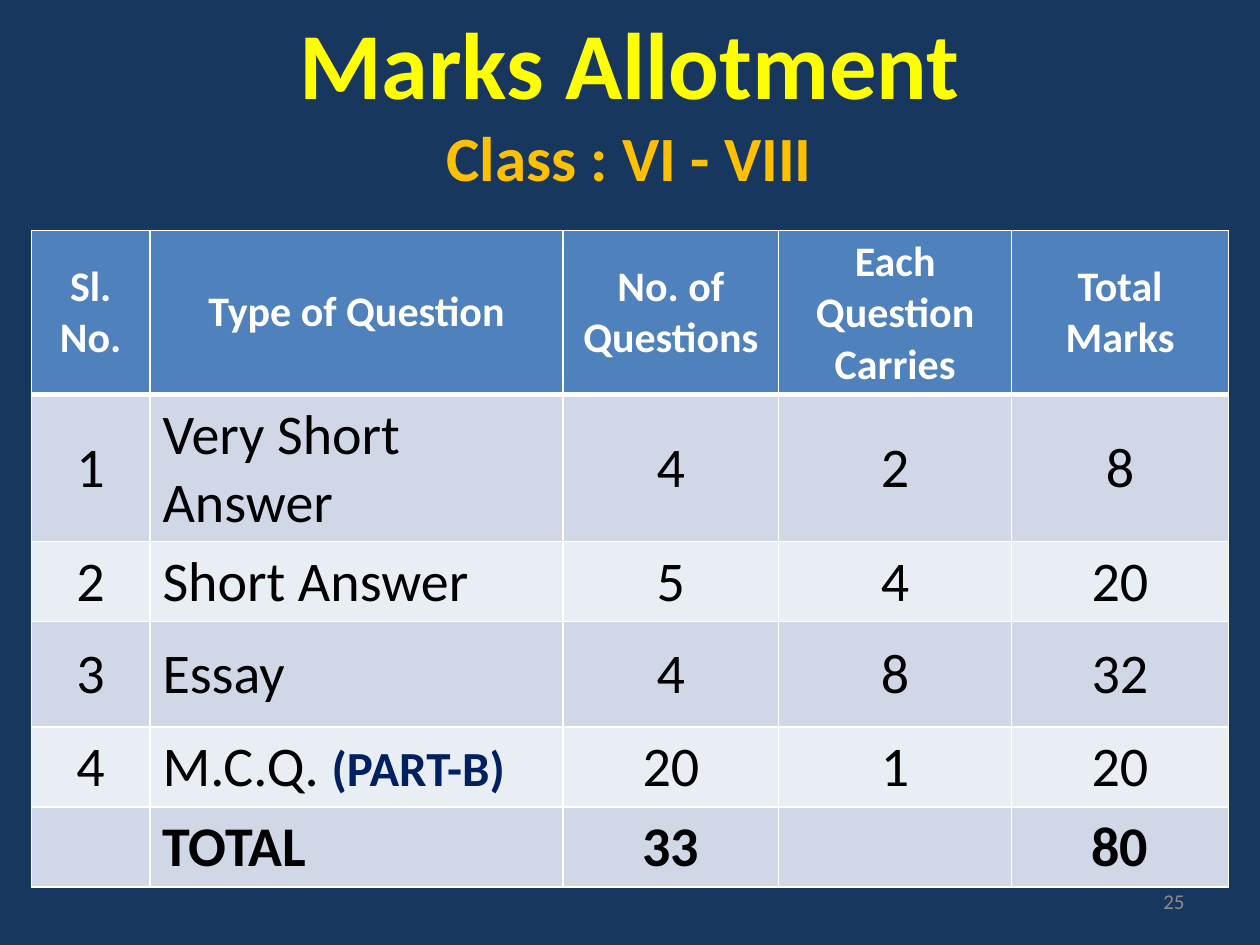
"""Build the marks allotment slide with its table of question types."""
from typing import NamedTuple

from lxml.etree import SubElement
from pptx import Presentation
from pptx.dml.color import RGBColor
from pptx.enum.text import MSO_ANCHOR as Anchor, PP_ALIGN as Align
from pptx.oxml.ns import qn
from pptx.util import Inches, Pt

FONT = "Calibri"
WHITE, BLACK, NAVY = "FFFFFF", "000000", "002060"
HEADER_FILL, BANDS = "4F81BD", ("D0D8E8", "E9EDF4")
COL_WIDTHS = (0.94, 3.28, 1.71, 1.85, 1.72)
ROW_HEIGHTS = (0.96, 0.87, 0.47, 0.84, 0.47, 0.47)
HEADINGS = ("Sl. No.", "Type of Question", "No. of Questions",
            "Each Question Carries", "Total Marks")


class MarkRow(NamedTuple):
    """One line of the allotment table."""
    number: str
    kind: str
    questions: str
    each: str
    total: str
    note: str = ""
    bold: bool = False


MARK_ROWS = (
    MarkRow("1", "Very Short Answer", "4", "2", "8"),
    MarkRow("2", "Short Answer", "5", "4", "20"),
    MarkRow("3", "Essay", "4", "8", "32"),
    MarkRow("4", "M.C.Q. ", "20", "1", "20", note="(PART-B)"),
    MarkRow("", "TOTAL", "33", "", "80", bold=True),
)


def rgb(value: str) -> RGBColor:
    """Turn a hex string into a colour."""
    return RGBColor.from_string(value)


def add_text(p, text: str, *, size: float, color: str, bold: bool = False,
             align: Align = Align.CENTER) -> None:
    """Add a formatted run to a paragraph."""
    p.alignment = align
    r = p.add_run()
    r.text = text
    r.font.name, r.font.size, r.font.bold = FONT, Pt(size), bold
    r.font.color.rgb = rgb(color)


def add_box(slide, left: float, top: float, width: float, height: float):
    """Add a wrapping, middle-anchored text box and return its paragraph."""
    tf = slide.shapes.add_textbox(
        Inches(left), Inches(top), Inches(width), Inches(height)).text_frame
    tf.word_wrap = True
    tf.vertical_anchor = Anchor.MIDDLE
    return tf.paragraphs[0]


def style_cell(cell, fill: str, top: float = 1, bottom: float = 1) -> None:
    """Give a cell white borders, a fill and a middle anchor."""
    cell.vertical_anchor = Anchor.MIDDLE
    tc_pr = cell._tc.get_or_add_tcPr()
    for side, width in (("L", 1), ("R", 1), ("T", top), ("B", bottom)):
        ln = SubElement(tc_pr, qn(f"a:ln{side}"), w=str(Pt(width)))
        SubElement(SubElement(ln, qn("a:solidFill")), qn("a:srgbClr"), val=WHITE)
    cell.fill.solid()
    cell.fill.fore_color.rgb = rgb(fill)


def add_marks_table(slide) -> None:
    """Draw the heading row and the banded rows of marks."""
    table = slide.shapes.add_table(
        len(ROW_HEIGHTS), len(COL_WIDTHS), Inches(0.25), Inches(1.83),
        Inches(sum(COL_WIDTHS)), Inches(sum(ROW_HEIGHTS))).table
    for column, width in zip(table.columns, COL_WIDTHS):
        column.width = Inches(width)
    for row, height in zip(table.rows, ROW_HEIGHTS):
        row.height = Inches(height)

    for c, heading in enumerate(HEADINGS):
        cell = table.cell(0, c)
        style_cell(cell, HEADER_FILL, bottom=3)
        add_text(cell.text_frame.paragraphs[0], heading, size=24, color=WHITE, bold=True)

    for i, row in enumerate(MARK_ROWS):
        for c, text in enumerate(row[:len(COL_WIDTHS)]):
            cell = table.cell(i + 1, c)
            style_cell(cell, BANDS[i % 2], top=3 if i == 0 else 1)
            p = cell.text_frame.paragraphs[0]
            align = Align.LEFT if c == 1 else Align.CENTER
            if text:
                add_text(p, text, size=32, color=BLACK, bold=row.bold, align=align)
            if c == 1 and row.note:
                add_text(p, row.note, size=28, color=NAVY, bold=True, align=align)


def main() -> None:
    """Build and save the slide."""
    prs = Presentation()
    prs.slide_width, prs.slide_height = Inches(10), Inches(7.5)
    slide = prs.slides.add_slide(prs.slide_layouts[6])
    slide.background.fill.solid()
    slide.background.fill.fore_color.rgb = rgb("17375E")

    title = add_box(slide, 0.12, 0.08, 9.75, 1.42)
    add_text(title, "Marks Allotment", size=54, color="FFFF00", bold=True)
    title.add_line_break()
    add_text(title, "Class : VI - VIII", size=36, color="FFC000", bold=True)

    add_marks_table(slide)

    page = add_box(slide, 7.17, 6.95, 2.33, 0.4)
    add_text(page, "25", size=12, color="8C8C8C", align=Align.RIGHT)
    prs.save("out.pptx")


if __name__ == "__main__":
    main()
